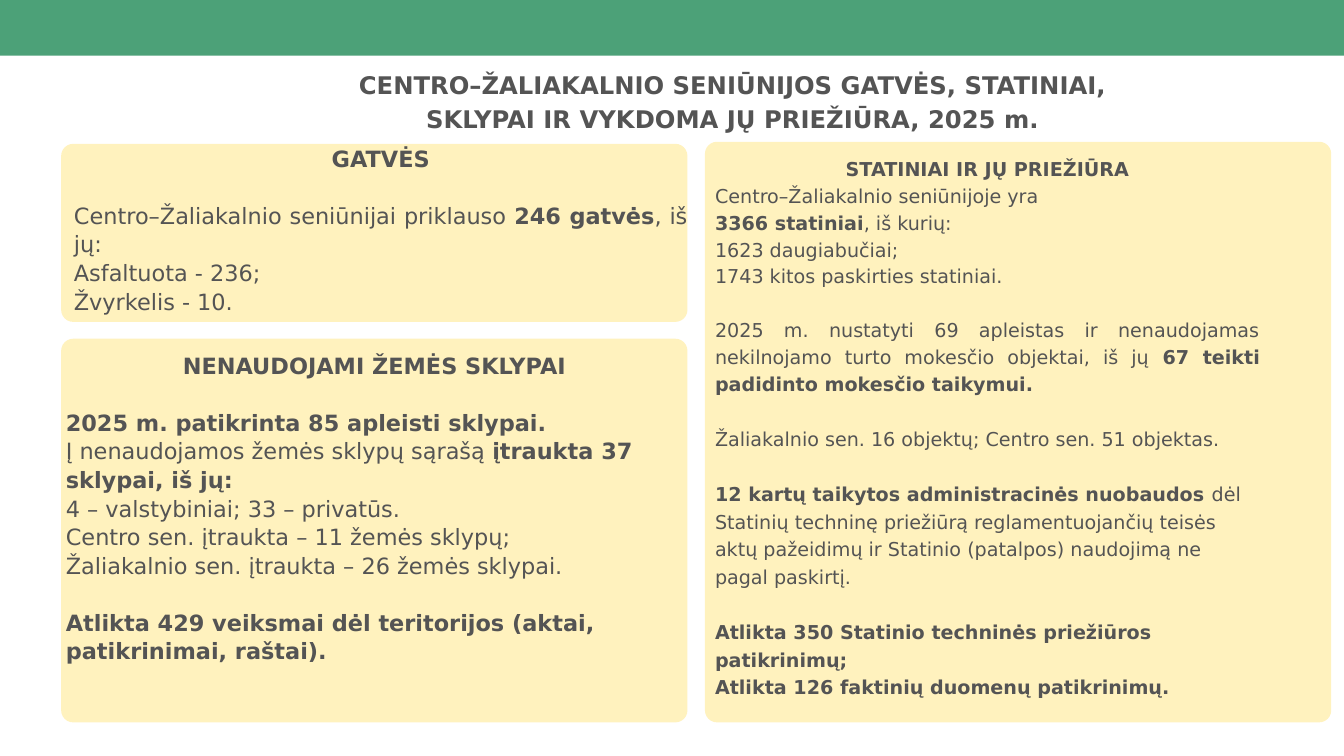
from collections import namedtuple

from lxml.etree import SubElement
from pptx import Presentation
from pptx.dml.color import RGBColor
from pptx.enum.shapes import MSO_SHAPE as Shape
from pptx.enum.text import PP_ALIGN as Align
from pptx.oxml.ns import qn
from pptx.util import Inches, Pt

GREEN = RGBColor(0x00, 0x7A, 0x3F)
YELLOW = RGBColor(0xFF, 0xDE, 0x59)
GREY = RGBColor(0x54, 0x54, 0x54)
FONT = "DejaVu Sans"
CORNER = 0.18

Box = namedtuple("Box", "left top width height")
# runs: (text, bold) pairs; gap: whole lines left free above the paragraph
Para = namedtuple("Para", "runs align leading gap", defaults=(Align.LEFT, 30.6, 0))


def heading(text, leading=30.6):
    return Para([(text, True)], Align.CENTER, leading)


def add_panel(slide, preset, box, color, opacity):
    panel = slide.shapes.add_shape(preset, *map(Inches, box))
    panel.shadow.inherit = False
    panel.line.fill.background()
    panel.fill.solid()
    panel.fill.fore_color.rgb = color
    rgb = panel.fill._xPr.find(".//" + qn("a:srgbClr"))
    SubElement(rgb, qn("a:alpha"), val=str(opacity * 1000))
    return panel


def add_copy(slide, box, paras, size):
    frame = slide.shapes.add_textbox(*map(Inches, box)).text_frame
    frame.word_wrap = True
    frame.margin_left = frame.margin_right = 0
    frame.margin_top = frame.margin_bottom = 0
    for index, para in enumerate(paras):
        line = frame.add_paragraph() if index else frame.paragraphs[0]
        line.alignment = para.align
        line.line_spacing = Pt(para.leading)
        if para.gap:
            line.space_before = Pt(para.leading * para.gap)
        for text, bold in para.runs:
            run = line.add_run()
            run.text = text
            run.font.name = FONT
            run.font.size = Pt(size)
            run.font.bold = bold
            run.font.color.rgb = GREY


def add_card(slide, box, inset, paras, size):
    """Rounded card; inset holds the text's left, top and right margins."""
    card = add_panel(slide, Shape.ROUNDED_RECTANGLE, box, YELLOW, 39)
    card.adjustments[0] = CORNER / min(box.width, box.height)
    left, top, right = inset
    copy_box = Box(box.left + left, box.top + top,
                   box.width - left - right, box.height - top)
    add_copy(slide, copy_box, paras, size)


def add_header(slide, box):
    add_panel(slide, Shape.RECTANGLE, box._replace(height=0.83), GREEN, 70)
    title = heading("CENTRO–ŽALIAKALNIO SENIŪNIJOS GATVĖS, STATINIAI, "
                    "SKLYPAI IR VYKDOMA JŲ PRIEŽIŪRA, 2025 m.", 36.4)
    title_box = Box(box.left + 4.63, box.top + 0.98, 12.55, box.height - 0.98)
    add_copy(slide, title_box, [title], 26)


def add_streets(slide, box):
    add_card(slide, box, (0.19, -0.01, 0), [
        heading("GATVĖS"),
        Para([("Centro–Žaliakalnio seniūnijai priklauso ", False),
              ("246 gatvės", True), (", iš jų:", False)], Align.JUSTIFY, gap=1),
        Para([("Asfaltuota - 236;", False)], Align.JUSTIFY),
        Para([("Žvyrkelis - 10.", False)]),
    ], 24)


def add_plots(slide, box):
    add_card(slide, box, (0.07, 0.17, 0.07), [
        heading("NENAUDOJAMI ŽEMĖS SKLYPAI"),
        Para([("2025 m. patikrinta 85 apleisti sklypai.", True)], gap=1),
        Para([("Į nenaudojamos žemės sklypų sąrašą ", False),
              ("įtraukta 37 sklypai, iš jų:", True)]),
        Para([("4 – valstybiniai; 33 – privatūs.", False)]),
        Para([("Centro sen. įtraukta – 11 žemės sklypų;", False)]),
        Para([("Žaliakalnio sen. įtraukta – 26 žemės sklypai.", False)]),
        Para([("Atlikta 429 veiksmai dėl teritorijos (aktai, "
               "patikrinimai, raštai).", True)], gap=1),
    ], 24)


def add_buildings(slide, box):
    tight, loose = 28.7, 29.6
    add_card(slide, box, (0.15, 0.18, 1.06), [
        heading("STATINIAI IR JŲ PRIEŽIŪRA", tight),
        Para([("Centro–Žaliakalnio seniūnijoje yra", False)], Align.JUSTIFY, tight),
        Para([("3366 statiniai", True), (", iš kurių:", False)], Align.JUSTIFY, tight),
        Para([("1623 daugiabučiai;", False)], Align.JUSTIFY, tight),
        Para([("1743 kitos paskirties statiniai.", False)], Align.JUSTIFY, tight),
        Para([("2025 m. nustatyti 69 apleistas ir nenaudojamas nekilnojamo turto "
               "mokesčio objektai, iš jų ", False),
              ("67 teikti padidinto mokesčio taikymui.", True)],
             Align.JUSTIFY, tight, 1),
        Para([("Žaliakalnio sen. 16 objektų; Centro sen. 51 objektas.", False)],
             leading=loose, gap=1),
        Para([("12 kartų taikytos administracinės nuobaudos ", True),
              ("dėl Statinių techninę priežiūrą reglamentuojančių teisės aktų "
               "pažeidimų ir Statinio (patalpos) naudojimą ne pagal paskirtį.", False)],
             leading=loose, gap=1),
        Para([("Atlikta 350 Statinio techninės priežiūros patikrinimų;", True)],
             leading=loose, gap=1),
        Para([("Atlikta 126 faktinių duomenų patikrinimų.", True)], leading=loose),
    ], 20.5)


def main():
    prs = Presentation()
    prs.slide_width, prs.slide_height = Inches(20), Inches(11.25)
    slide = prs.slides.add_slide(prs.slide_layouts[6])
    add_header(slide, Box(0, 0, 20, 1.96))
    add_streets(slide, Box(0.91, 2.14, 9.32, 2.65))
    add_buildings(slide, Box(10.49, 2.11, 9.32, 8.64))
    add_plots(slide, Box(0.91, 5.04, 9.32, 5.71))
    prs.save("out.pptx")


if __name__ == "__main__":
    main()
